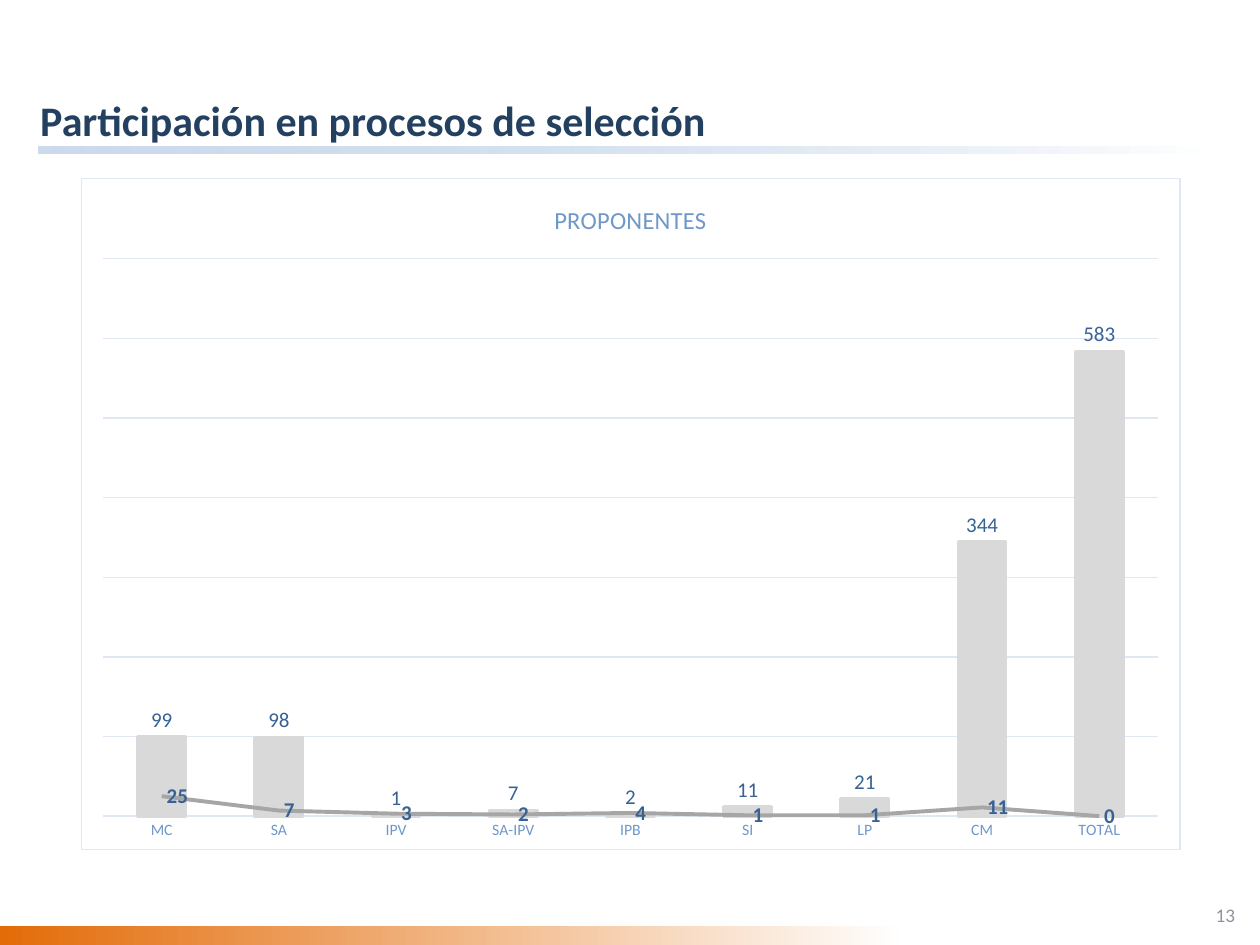
import copy
import lxml.etree
import pptx
import pptx.chart.data
import pptx.dml.color
import pptx.enum.chart
import pptx.enum.shapes
import pptx.enum.text
import pptx.oxml
import pptx.oxml.ns
import pptx.util

Pt = pptx.util.Pt
RGB = pptx.dml.color.RGBColor
qn = pptx.oxml.ns.qn
LABEL = pptx.enum.chart.XL_LABEL_POSITION

WHITE = RGB(0xFF, 0xFF, 0xFF)
NAVY = RGB(0x24, 0x40, 0x61)
BLUE = RGB(0x38, 0x62, 0x95)
SKY = RGB(0x6F, 0x98, 0xC9)
MIST = RGB(0x9A, 0xB7, 0xD9)
PALE = RGB(0xDE, 0xE7, 0xF3)
ORANGE = RGB(0xE3, 0x6C, 0x09)
SILVER = RGB(0xD9, 0xD9, 0xD9)
GRAY = RGB(0xA6, 0xA6, 0xA6)
SLATE = RGB(0x8E, 0x93, 0x9E)
FONT = "Calibri"

TYPES = ["MC", "SA", "IPV", "SA-IPV", "IPB", "SI", "LP", "CM", "TOTAL"]
COLUMNS = [99, 98, 1, 7, 2, 11, 21, 344, 583]
POINTS = [25, 7, 3, 2, 4, 1, 1, 11, 0]


def style(font, size, color, bold=False):
    font.name = FONT
    font.size = Pt(size)
    font.bold = bold
    font.color.rgb = color


def put_band(slide, box, color, alpha=None):
    """Bar that fades from a colour at the left to white."""
    band = slide.shapes.add_shape(
        pptx.enum.shapes.MSO_SHAPE.RECTANGLE, *map(Pt, box))
    band.shadow.inherit = False
    band.line.fill.background()
    band.fill.gradient()
    band.fill.gradient_angle = 0
    for stop, tone in zip(band.fill.gradient_stops, (color, WHITE)):
        stop.color.rgb = tone
    if alpha:
        first = next(band.element.iter(qn("a:srgbClr")))
        lxml.etree.SubElement(first, qn("a:alpha")).set("val", str(alpha * 1000))


def put_title(slide, box, text):
    title = slide.shapes.title
    title.left, title.top, title.width, title.height = map(Pt, box)
    frame = title.text_frame
    frame.auto_size = pptx.enum.text.MSO_AUTO_SIZE.NONE
    frame.margin_left = frame.margin_right = 0
    frame.margin_top = frame.margin_bottom = 0
    frame.vertical_anchor = pptx.enum.text.MSO_ANCHOR.BOTTOM
    para = frame.paragraphs[0]
    para.alignment = pptx.enum.text.PP_ALIGN.LEFT
    style(para.font, 24, NAVY, True)
    run = para.add_run()
    run.text = text
    style(run.font, 24, NAVY, True)
    para.add_line_break()


def put_number(slide, box, text):
    frame = slide.shapes.add_textbox(*map(Pt, box)).text_frame
    frame.word_wrap = True
    frame.vertical_anchor = pptx.enum.text.MSO_ANCHOR.MIDDLE
    para = frame.paragraphs[0]
    para.alignment = pptx.enum.text.PP_ALIGN.CENTER
    run = para.add_run()
    run.text = text
    style(run.font, 11, SLATE)


def set_line(line, color, width):
    line.color.rgb = color
    line.width = Pt(width)


def add_labels(series, place, bold=False):
    labels = series.data_labels
    labels.show_value = True
    labels.position = place
    labels.number_format = "0"
    labels.number_format_is_linked = False
    style(labels.font, 12, BLUE, bold)


def split_line(chart):
    """Move the second series from the columns into a line plot."""
    bars = next(chart.element.iter(qn("c:barChart")))
    series = bars.findall(qn("c:ser"))[1]
    for flag in series.findall(qn("c:invertIfNegative")):
        series.remove(flag)
    plot = lxml.etree.SubElement(bars.getparent(), qn("c:lineChart"))
    bars.addnext(plot)
    lxml.etree.SubElement(plot, qn("c:grouping")).set("val", "standard")
    lxml.etree.SubElement(plot, qn("c:varyColors")).set("val", "0")
    plot.append(series)
    lxml.etree.SubElement(plot, qn("c:marker")).set("val", "1")
    for axis in bars.findall(qn("c:axId")):
        plot.append(copy.deepcopy(axis))


def frame_chart(chart, left, top, width, height):
    """Fix the inner plot area and draw the chart's own border."""
    ns = pptx.oxml.ns.nsdecls("c", "a")
    area = next(chart.element.iter(qn("c:plotArea")))
    for old in area.findall(qn("c:layout")):
        area.remove(old)
    area.insert(0, pptx.oxml.parse_xml(
        f'<c:layout {ns}><c:manualLayout><c:layoutTarget val="inner"/>'
        f'<c:xMode val="edge"/><c:yMode val="edge"/><c:x val="{left}"/>'
        f'<c:y val="{top}"/><c:w val="{width}"/><c:h val="{height}"/>'
        f'</c:manualLayout></c:layout>'))
    chart.element.find(qn("c:chart")).addnext(pptx.oxml.parse_xml(
        f'<c:spPr {ns}><a:solidFill><a:srgbClr val="{WHITE}"/></a:solidFill>'
        f'<a:ln w="{int(Pt(0.75))}"><a:solidFill><a:srgbClr val="{PALE}"/>'
        f'</a:solidFill></a:ln></c:spPr>'))


def put_chart(slide, box):
    data = pptx.chart.data.CategoryChartData(number_format="0")
    data.categories = TYPES
    data.add_series("Series 1", COLUMNS)
    data.add_series("Series 2", POINTS)
    chart = slide.shapes.add_chart(
        pptx.enum.chart.XL_CHART_TYPE.COLUMN_CLUSTERED,
        *map(Pt, box), data).chart
    style(chart.font, 10, BLUE)
    chart.has_legend = False
    chart.has_title = True
    run = chart.chart_title.text_frame.paragraphs[0].add_run()
    run.text = "PROPONENTES"
    style(run.font, 14, SKY)

    # Axes
    none = pptx.enum.chart.XL_TICK_MARK.NONE
    base, scale = chart.category_axis, chart.value_axis
    base.major_tick_mark = base.minor_tick_mark = none
    style(base.tick_labels.font, 9, SKY)
    set_line(base.format.line, PALE, 0.75)
    scale.visible = False
    scale.minimum_scale, scale.maximum_scale = 0, 700
    scale.major_unit = 100
    scale.has_major_gridlines = True
    set_line(scale.major_gridlines.format.line, PALE, 0.75)

    # Columns, then the line
    chart.plots[0].gap_width = 150
    chart.plots[0].vary_by_categories = False
    split_line(chart)
    bars, line = chart.plots[0].series[0], chart.plots[1].series[0]
    bars.format.fill.solid()
    bars.format.fill.fore_color.rgb = SILVER
    set_line(bars.format.line, SILVER, 2.25)
    add_labels(bars, LABEL.OUTSIDE_END)
    set_line(line.format.line, GRAY, 2.25)
    line.marker.style = pptx.enum.chart.XL_MARKER_STYLE.NONE
    line.smooth = False
    add_labels(line, LABEL.RIGHT, True)
    frame_chart(chart, 0.02, 0.12, 0.96, 0.83)


def main():
    deck = pptx.Presentation()
    deck.slide_width, deck.slide_height = Pt(720), Pt(540)
    slide = deck.slides.add_slide(deck.slide_layouts[5])
    # Rule under the title and bar at the foot
    put_band(slide, (22.3, 83.5, 676, 4), MIST, 50)
    put_band(slide, (0, 529.2, 517.7, 10.8), ORANGE)
    # Content
    put_title(slide, (23, 70.6, 676.8, 41), "Participación en procesos de selección")
    put_chart(slide, (46, 101.5, 628.6, 384.5))
    put_number(slide, (683.3, 508.3, 33.8, 28.8), "13")
    deck.save("out.pptx")


if __name__ == "__main__":
    main()
